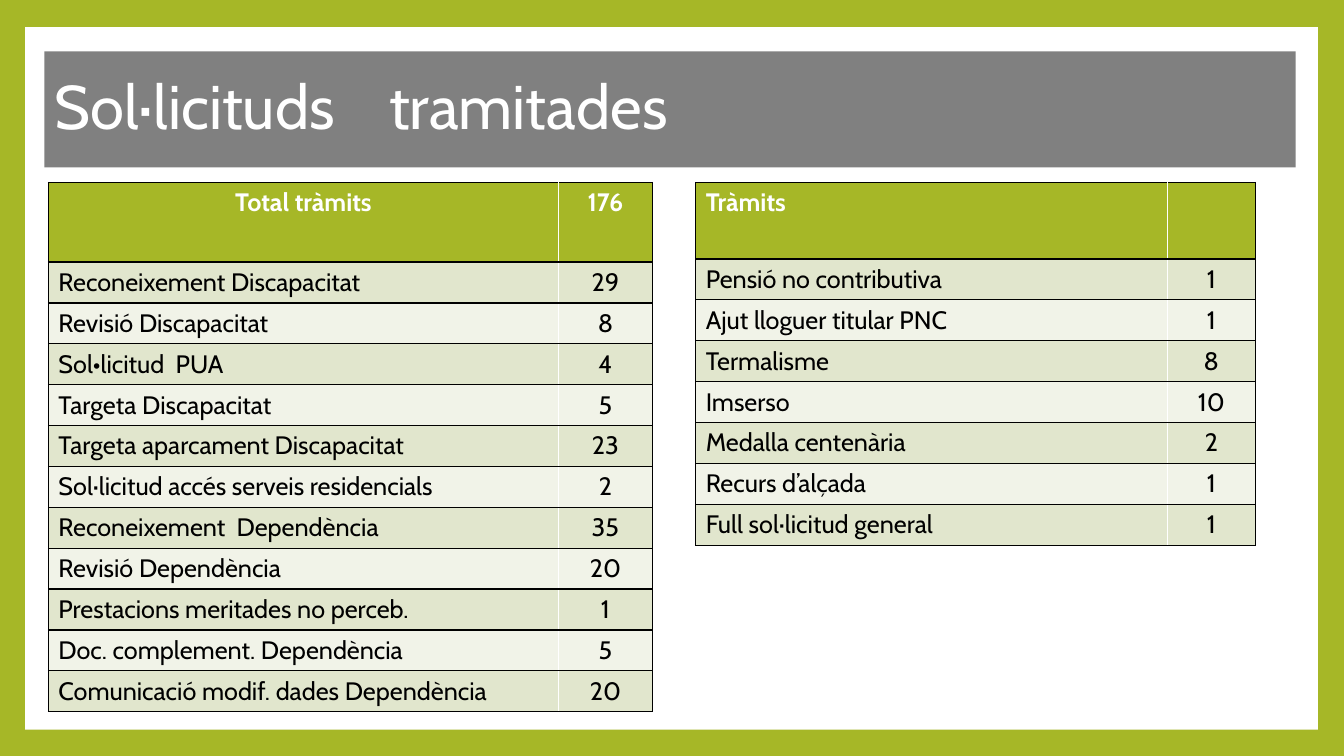
from dataclasses import dataclass

from lxml.etree import SubElement
from pptx import Presentation
from pptx.dml.color import RGBColor
from pptx.enum.shapes import MSO_SHAPE
from pptx.enum.text import MSO_ANCHOR, MSO_AUTO_SIZE, PP_ALIGN
from pptx.oxml.ns import qn
from pptx.slide import Slide
from pptx.table import _Cell
from pptx.util import Inches, Pt

GREEN = RGBColor(0xA6, 0xB7, 0x27)
GREY = RGBColor(0x80, 0x80, 0x80)
BAND_DARK = RGBColor(0xE1, 0xE6, 0xCD)
BAND_LIGHT = RGBColor(0xF1, 0xF3, 0xE8)
BLACK = RGBColor(0, 0, 0)
WHITE = RGBColor(0xFF, 0xFF, 0xFF)
FONT = "Cabin"
TABLE_TOP = 1.81
ROW_HEIGHT = 0.4


@dataclass(frozen=True)
class RequestTable:
    left: float
    column_widths: tuple[float, float]
    header_height: float
    header_alignment: PP_ALIGN
    rows: list[tuple[str, str]]


DISABILITY_AND_DEPENDENCY = RequestTable(
    0.48, (5.06, 0.93), 0.79, PP_ALIGN.CENTER,
    [
        ("Total tràmits", "176"),
        ("Reconeixement Discapacitat", "29"),
        ("Revisió Discapacitat", "8"),
        ("Sol•licitud  PUA", "4"),
        ("Targeta Discapacitat", "5"),
        ("Targeta aparcament Discapacitat", "23"),
        ("Sol·licitud accés serveis residencials", "2"),
        ("Reconeixement  Dependència", "35"),
        ("Revisió Dependència", "20"),
        ("Prestacions meritades no perceb.", "1"),
        ("Doc. complement. Dependència", "5"),
        ("Comunicació modif. dades Dependència", "20"),
    ],
)
OTHER_REQUESTS = RequestTable(
    6.9, (4.68, 0.87), 0.76, PP_ALIGN.LEFT,
    [
        ("Tràmits", ""),
        ("Pensió no contributiva", "1"),
        ("Ajut lloguer titular PNC", "1"),
        ("Termalisme", "8"),
        ("Imserso", "10"),
        ("Medalla centenària", "2"),
        ("Recurs d’alçada", "1"),
        ("Full sol·licitud general", "1"),
    ],
)


def set_borders(cell: _Cell, left: RGBColor, right: RGBColor) -> None:
    """Draw one-point borders, black above and below."""
    properties = cell._tc.get_or_add_tcPr()
    sides = {"a:lnL": left, "a:lnR": right, "a:lnT": BLACK, "a:lnB": BLACK}
    for position, (tag, color) in enumerate(sides.items()):
        line = SubElement(properties, qn(tag), w=str(Pt(1)))
        fill = SubElement(line, qn("a:solidFill"))
        SubElement(fill, qn("a:srgbClr"), val=str(color))
        properties.insert(position, line)


def add_request_table(slide: Slide, content: RequestTable) -> None:
    row_count = len(content.rows)
    height = content.header_height + ROW_HEIGHT * (row_count - 1)
    table = slide.shapes.add_table(
        row_count, 2, Inches(content.left), Inches(TABLE_TOP),
        Inches(sum(content.column_widths)), Inches(height),
    ).table
    for column, width in zip(table.columns, content.column_widths):
        column.width = Inches(width)
    for row_index, texts in enumerate(content.rows):
        is_header = row_index == 0
        table.rows[row_index].height = Inches(
            content.header_height if is_header else ROW_HEIGHT
        )
        band = BAND_DARK if row_index % 2 else BAND_LIGHT
        label_alignment = content.header_alignment if is_header else PP_ALIGN.LEFT
        for column_index, text in enumerate(texts):
            is_label = column_index == 0
            cell = table.cell(row_index, column_index)
            cell.fill.solid()
            cell.fill.fore_color.rgb = GREEN if is_header else band
            set_borders(
                cell, BLACK if is_label else WHITE, WHITE if is_label else BLACK
            )
            cell.text_frame.text = text
            para = cell.text_frame.paragraphs[0]
            para.alignment = label_alignment if is_label else PP_ALIGN.CENTER
            for span in para.runs:
                span.font.name = FONT
                span.font.size = Pt(18)
                span.font.bold = is_header
                span.font.color.rgb = WHITE if is_header else BLACK


def add_panel(slide: Slide) -> None:
    """Place the white page area behind everything else."""
    panel = slide.shapes.add_shape(
        MSO_SHAPE.RECTANGLE, Inches(0.25), Inches(0.27), Inches(12.82), Inches(6.97)
    )
    panel.shadow.inherit = False
    panel.fill.solid()
    panel.fill.fore_color.rgb = WHITE
    panel.line.fill.background()
    slide.shapes.title._element.addprevious(panel._element)


def format_title(slide: Slide) -> None:
    title = slide.shapes.title
    title.left, title.top = Inches(0.44), Inches(0.51)
    title.width, title.height = Inches(12.41), Inches(1.15)
    title.fill.solid()
    title.fill.fore_color.rgb = GREY
    frame = title.text_frame
    frame.text = "Sol·licituds\ttramitades"
    frame.auto_size = MSO_AUTO_SIZE.NONE
    frame.vertical_anchor = MSO_ANCHOR.MIDDLE
    para = frame.paragraphs[0]
    para.alignment = PP_ALIGN.LEFT
    para.line_spacing = 0.9
    tabs = SubElement(para._p.get_or_add_pPr(), qn("a:tabLst"))
    SubElement(tabs, qn("a:tab"), pos=str(Inches(3.32)), algn="l")
    for span in para.runs:
        span.font.name = FONT
        span.font.size = Pt(44)
        span.font.color.rgb = WHITE


def main() -> None:
    deck = Presentation()
    deck.slide_width, deck.slide_height = Inches(13.33), Inches(7.5)
    page = deck.slides.add_slide(deck.slide_layouts.get_by_name("Title Only"))
    page.background.fill.solid()
    page.background.fill.fore_color.rgb = GREEN
    add_panel(page)
    format_title(page)
    for content in (DISABILITY_AND_DEPENDENCY, OTHER_REQUESTS):
        add_request_table(page, content)
    deck.save("out.pptx")


if __name__ == "__main__":
    main()
